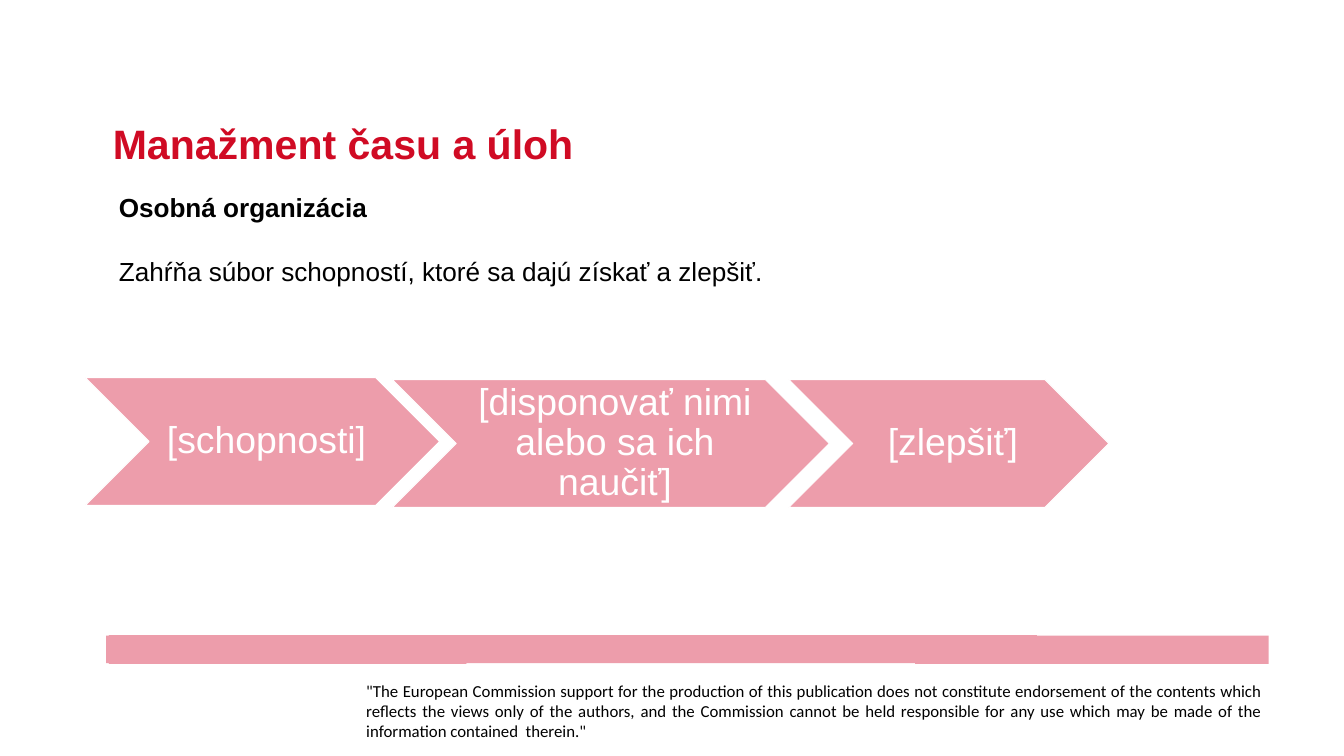
"""Build the slide on personal organisation with its three-step chevron process."""
from pptx import Presentation
from pptx.dml.color import RGBColor
from pptx.enum.shapes import MSO_SHAPE
from pptx.enum.text import MSO_ANCHOR, PP_ALIGN
from pptx.util import Inches, Pt

CHEVRON = MSO_SHAPE.CHEVRON
MIDDLE = MSO_ANCHOR.MIDDLE
LEFT, CENTER, JUSTIFY = PP_ALIGN.LEFT, PP_ALIGN.CENTER, PP_ALIGN.JUSTIFY
COLORS = {"pink": "ED9DAB", "red": "D00B24", "black": "000000", "white": "FFFFFF"}

prs = Presentation()
prs.slide_width, prs.slide_height = Inches(20), Inches(11.25)
slide = prs.slides.add_slide(prs.slide_layouts[6])
shapes = slide.shapes


def place(x, y):
    """Turn percentages of the slide's width and height into lengths."""
    return round(prs.slide_width * x / 100), round(prs.slide_height * y / 100)


def write(frame, text, *, size, color="black", bold=False, font="Arial", align=LEFT,
          spacing=None, before=None, margins=(0.1, 0.05, 0.1, 0.05), new=False):
    """Set one formatted paragraph in a text frame, or append it when new."""
    frame.word_wrap = True
    frame.margin_left, frame.margin_top, frame.margin_right, frame.margin_bottom = map(Inches, margins)
    paragraph = frame.add_paragraph() if new else frame.paragraphs[0]
    paragraph.alignment = align
    if spacing:
        paragraph.line_spacing = spacing
    if before:
        paragraph.space_before = Pt(before)
    run = paragraph.add_run()
    run.text = text
    run.font.name, run.font.size, run.font.bold = font, Pt(size), bold
    run.font.color.rgb = RGBColor.from_string(COLORS[color])


band_outline = [
    (94.4, 84.09), (77.15, 84.09), (77.15, 84), (8.1, 84), (8.1, 84.09), (7.9, 84.09),
    (7.9, 87.73), (8.1, 87.73), (8.1, 87.82), (34.7, 87.82), (34.7, 87.73),
    (68.1, 87.73), (68.1, 87.82), (94.4, 87.82),
]
corners = [place(*corner) for corner in band_outline]
builder = shapes.build_freeform(*corners[0])
builder.add_line_segments(corners[1:], close=True)
band = builder.convert_to_shape()
band.shadow.inherit = False
band.fill.solid()
band.fill.fore_color.rgb = RGBColor.from_string(COLORS["pink"])
band.line.fill.background()

disclaimer = shapes.add_textbox(*place(27.25, 90.22), *place(66.65, 6.76))
write(disclaimer.text_frame,
      '"The European Commission support for the production of this publication does not '
      'constitute endorsement of the contents which reflects the views only of the authors, '
      'and the Commission cannot be held responsible for any use which may be made of the '
      'information contained  therein."',
      size=18, font="Calibri", align=JUSTIFY, spacing=0.98, margins=(0, 0, 0, 0))

intro = shapes.add_textbox(*place(8.35, 24.89), *place(72.1, 13.33))
write(intro.text_frame, "Osobná organizácia", size=28, bold=True)
write(intro.text_frame, "Zahŕňa súbor schopností, ktoré sa dajú získať a zlepšiť.",
      size=28, before=35, new=True)

steps = [
    ("[schopnosti]", 6.35, 49.96, 26.35),
    ("[disponovať nimi alebo sa ich naučiť]", 29.2, 50.22, 32.5),
    ("[zlepšiť]", 58.7, 50.22, 23.8),
]
for label, left, top, width in steps:
    step = shapes.add_shape(CHEVRON, *place(left, top), *place(width, 16.89))
    step.adjustments[0] = 0.5
    step.shadow.inherit = False
    step.fill.solid()
    step.fill.fore_color.rgb = RGBColor.from_string(COLORS["pink"])
    step.line.color.rgb = RGBColor.from_string(COLORS["white"])
    step.line.width = Pt(1)
    step.text_frame.vertical_anchor = MIDDLE
    write(step.text_frame, label, size=40, color="white", align=CENTER, spacing=0.9,
          margins=(0.18, 0.06, 0.06, 0.06))

title = shapes.add_textbox(*place(7.9, 15.29), *place(48.2, 7.38))
write(title.text_frame, "Manažment času a úloh", size=44, color="red", bold=True)

prs.save("out.pptx")
